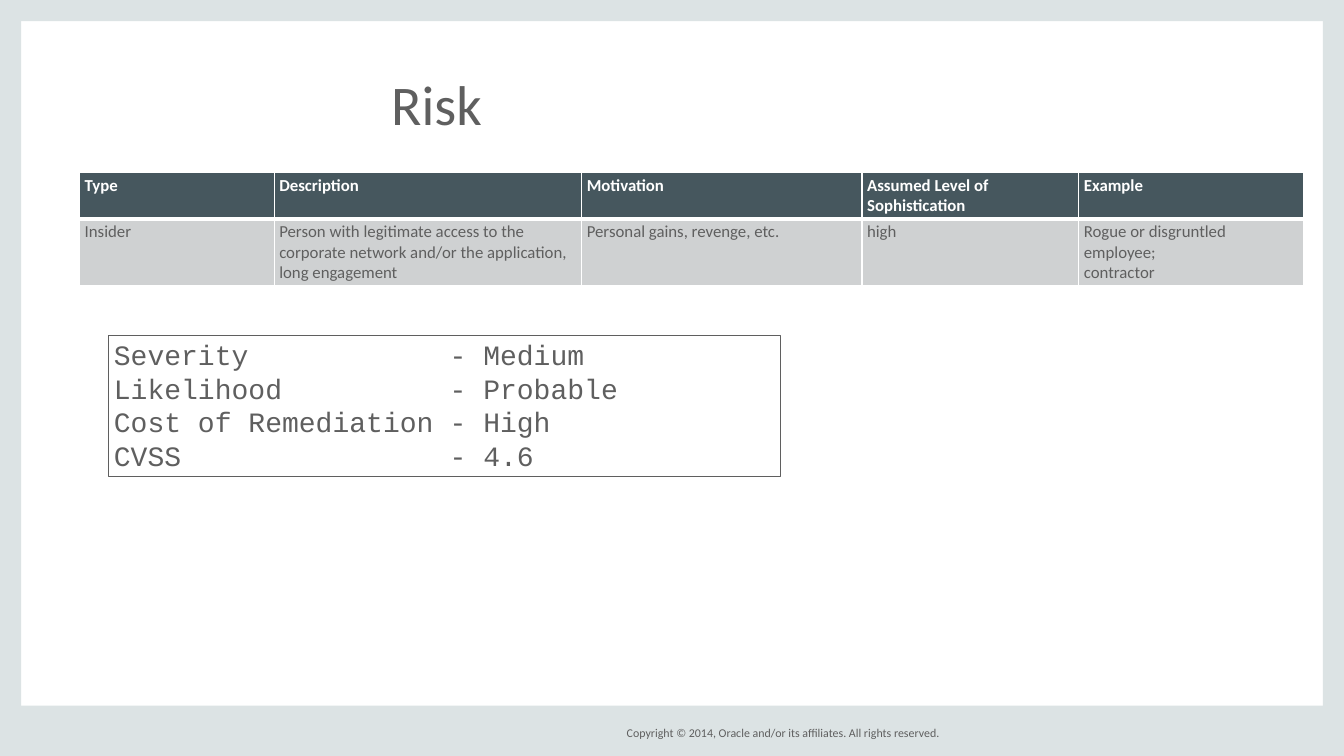
import pptx
import pptx.util
import pptx.dml.color
import pptx.enum.shapes
import pptx.enum.text
import pptx.oxml
import pptx.oxml.ns
import lxml.etree

Inches = pptx.util.Inches
Pt = pptx.util.Pt
RGBColor = pptx.dml.color.RGBColor
GREY = RGBColor(0x5F, 0x5F, 0x5F)
PALE = RGBColor(0xDC, 0xE3, 0xE4)
SLATE = RGBColor(0x46, 0x57, 0x5E)
SILVER = RGBColor(0xCF, 0xD1, 0xD2)
WHITE = RGBColor(0xFF, 0xFF, 0xFF)


def style(frame, size, color=GREY, name="Calibri", bold=False):
    for para in frame.paragraphs:
        for run in para.runs:
            run.font.size = Pt(size)
            run.font.name = name
            run.font.bold = bold
            run.font.color.rgb = color


def inset(item, side, top):
    """Set equal side margins and equal top and bottom margins."""
    item.margin_left = item.margin_right = Inches(side)
    item.margin_top = item.margin_bottom = Inches(top)


deck = pptx.Presentation()
deck.slide_width = Inches(13.33)
deck.slide_height = Inches(7.5)
slide = deck.slides.add_slide(deck.slide_layouts[6])
shapes = slide.shapes
RECT = pptx.enum.shapes.MSO_SHAPE.RECTANGLE

# Border around the page
for box in [(0, 0, 0.21, 7.5), (13.12, 0, 0.21, 7.5),
            (0, 7, 13.33, 0.5), (0, 0, 13.33, 0.21)]:
    edge = shapes.add_shape(RECT, *map(Inches, box))
    edge.shadow.inherit = False
    edge.fill.solid()
    edge.fill.fore_color.rgb = PALE
    edge.line.fill.background()

# Footer
foot = shapes.add_textbox(Inches(5.88), Inches(7.17), Inches(3.44), Inches(0.2)).text_frame
foot.text = "Copyright © 2014, Oracle and/or its affiliates. All rights reserved."
foot.word_wrap = False
foot.vertical_anchor = pptx.enum.text.MSO_ANCHOR.MIDDLE
foot.paragraphs[0].alignment = pptx.enum.text.PP_ALIGN.RIGHT
inset(foot, 0, 0)
style(foot, 8.5)

# Title
title = shapes.add_textbox(Inches(3.83), Inches(0.67), Inches(4.62), Inches(0.72)).text_frame
title.text = "Risk"
title.word_wrap = True
inset(title, 0.05, 0.02)
style(title, 40)

# Rating box, with the values lined up on a tab stop
rating = shapes.add_textbox(Inches(1.08), Inches(3.33), Inches(6.66), Inches(1.4))
rating.line.color.rgb = GREY
rating.line.width = Pt(0.75)
frame = rating.text_frame
frame.word_wrap = True
inset(frame, 0.05, 0.02)
frame.text = "\n".join([
    "Severity\t- Medium",
    "Likelihood\t- Probable",
    "Cost of Remediation\t- High",
    "CVSS\t- 4.6",
])
for para in frame.paragraphs:
    tabs = lxml.etree.SubElement(para._p.get_or_add_pPr(), pptx.oxml.ns.qn("a:tabLst"))
    lxml.etree.SubElement(tabs, pptx.oxml.ns.qn("a:tab"), pos=str(Inches(3.33)), algn="l")
style(frame, 20, name="Courier New")

# Threat table
rows = [
    ["Type", "Description", "Motivation", "Assumed Level of Sophistication", "Example"],
    ["Insider",
     "Person with legitimate access to the corporate network and/or the application, "
     "long engagement",
     "Personal gains, revenge, etc.", "high", "Rogue or disgruntled employee;\ncontractor"],
]
table = shapes.add_table(2, 5, Inches(0.79), Inches(1.71), Inches(12.14), Inches(1.1)).table
for col, width in zip(table.columns, [1.93, 3.05, 2.78, 2.15, 2.23]):
    col.width = Inches(width)
for row, height in zip(table.rows, [0.45, 0.65]):
    row.height = Inches(height)

for r, words in enumerate(rows):
    head = r == 0
    for c, text in enumerate(words):
        cell = table.cell(r, c)
        cell.text = text
        inset(cell, 0.05, 0.03)
        style(cell.text_frame, 12, WHITE if head else GREY, bold=head)
        props = cell._tc.get_or_add_tcPr()
        for side in "LRTB":
            thick = (head and side == "B") or (not head and side == "T")
            props.append(pptx.oxml.parse_xml(
                f'<a:ln{side} {pptx.oxml.ns.nsdecls("a")} w="{Pt(3 if thick else 1)}">'
                f'<a:solidFill><a:srgbClr val="{WHITE}"/></a:solidFill></a:ln{side}>'))
        cell.fill.solid()
        cell.fill.fore_color.rgb = SLATE if head else SILVER

deck.save("out.pptx")
